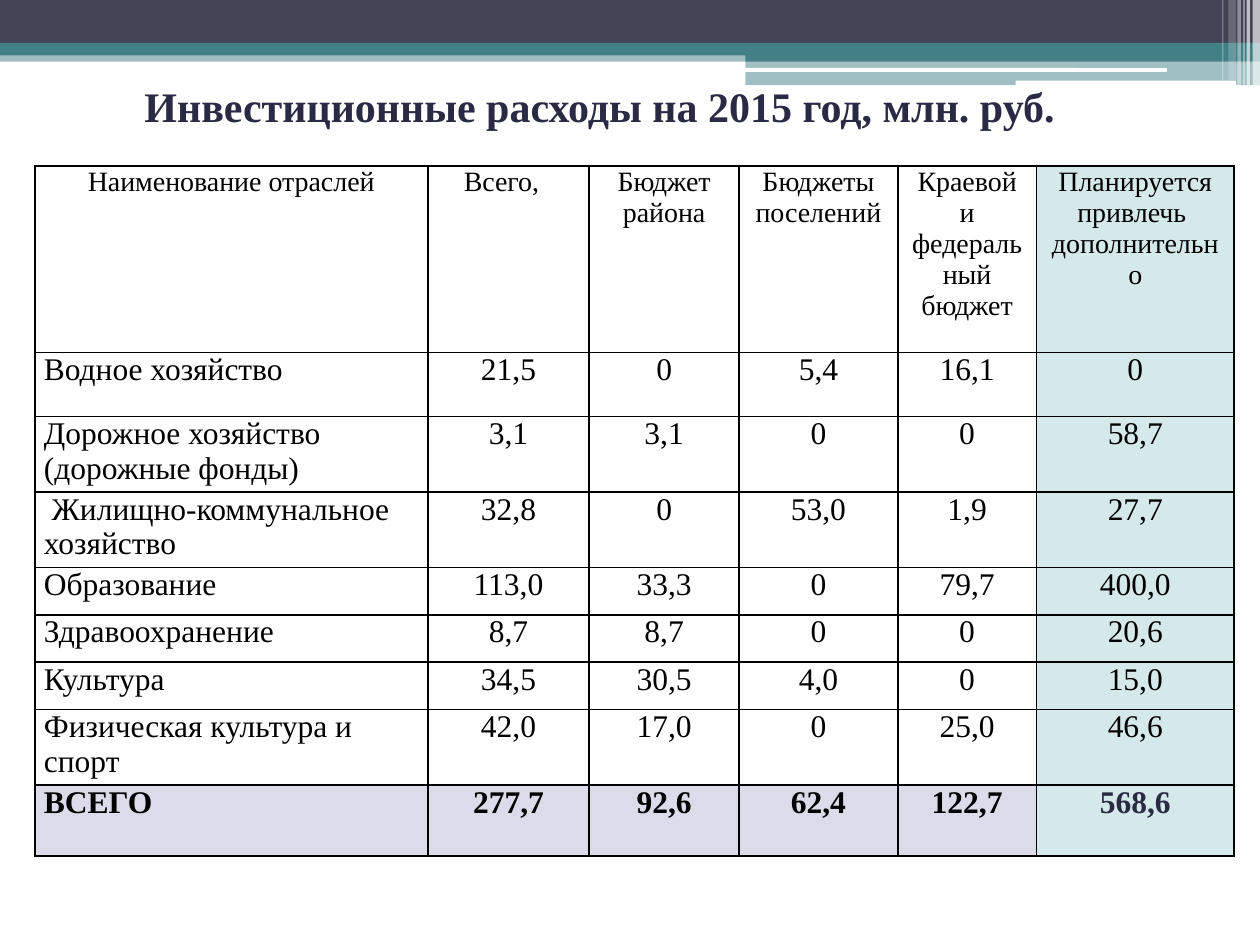
from lxml import etree
from pptx import Presentation
from pptx.dml.color import RGBColor
from pptx.enum.shapes import MSO_SHAPE
from pptx.enum.text import MSO_ANCHOR, PP_ALIGN
from pptx.oxml.ns import qn
from pptx.util import Pt

RECTANGLE, ROUNDED = MSO_SHAPE.RECTANGLE, MSO_SHAPE.ROUNDED_RECTANGLE
LEFT, CENTER = PP_ALIGN.LEFT, PP_ALIGN.CENTER
MIDDLE = MSO_ANCHOR.MIDDLE

BLACK = RGBColor(0x00, 0x00, 0x00)
WHITE = RGBColor(0xFF, 0xFF, 0xFF)
SLATE = RGBColor(0x42, 0x44, 0x56)
TEAL = RGBColor(0x43, 0x80, 0x86)
NAVY = RGBColor(0x2A, 0x2A, 0x45)
PALE_TEAL = RGBColor(0xD6, 0xE9, 0xEA)
PALE_VIOLET = RGBColor(0xDB, 0xDB, 0xE9)

FONT = "Times New Roman"
TITLE = "Инвестиционные расходы на 2015 год, млн. руб."

# left, top, width, height, colour, opacity in percent
BANDS = [
    (0, 28.8, 720, 6.5, TEAL, 50),
    (0, 0, 720, 24.5, SLATE, 100),
    (0, 24.5, 720, 7.2, TEAL, 100),
    (426, 28.1, 294, 7, TEAL, 100),
    (426, 34.7, 294, 14, TEAL, 50),
]
WHITE_BARS = [(425.6, 38.9, 241.2, 2.16), (580.3, 46.1, 126, 2.9)]
# left, width, height, opacity in percent
STRIPES = [
    (715.8, 4.2, 49, 65),
    (712.3, 2, 49, 65),
    (710.5, 0.7, 49, 60),
    (707.1, 2, 49, 40),
    (702, 4.3, 46, 20),
    (698.4, 0.7, 46, 30),
]

COLUMN_WIDTHS = [224.6, 92.2, 85.7, 90.7, 79.2, 113]
ROW_HEIGHTS = [106.3, 36.6, 40, 41.7, 27, 27, 27, 40, 40.6]
ROWS = [
    ["Наименование отраслей", "Всего,  ", "Бюджет района", "Бюджеты поселений",
     "Краевой и федеральный бюджет", "Планируется привлечь  дополнительно"],
    ["Водное хозяйство", "21,5", "0", "5,4", "16,1", "0"],
    ["Дорожное хозяйство (дорожные фонды)", "3,1", "3,1", "0", "0", "58,7"],
    [" Жилищно-коммунальное\nхозяйство", "32,8", "0", "53,0", "1,9", "27,7"],
    ["Образование", "113,0", "33,3", "0", "79,7", "400,0"],
    ["Здравоохранение", "8,7", "8,7", "0", "0", "20,6"],
    ["Культура", "34,5", "30,5", "4,0", "0", "15,0"],
    ["Физическая культура и спорт", "42,0", "17,0", "0", "25,0", "46,6"],
    ["ВСЕГО", "277,7", "92,6", "62,4", "122,7", "568,6"],
]


def write_text(frame, text, size=18, color=BLACK, bold=False, align=CENTER):
    frame.word_wrap = True
    frame.text = text
    for paragraph in frame.paragraphs:
        paragraph.alignment = align
        for run in paragraph.runs:
            run.font.name = FONT
            run.font.size = Pt(size)
            run.font.bold = bold
            run.font.color.rgb = color


def add_block(slide, left, top, width, height, color, opacity=100, kind=RECTANGLE):
    shape = slide.shapes.add_shape(kind, Pt(left), Pt(top), Pt(width), Pt(height))
    shape.shadow.inherit = False
    shape.line.fill.background()
    shape.fill.solid()
    shape.fill.fore_color.rgb = color
    if opacity < 100:
        color_element = shape.fill._xPr.find(".//" + qn("a:srgbClr"))
        etree.SubElement(color_element, qn("a:alpha"), val=str(opacity * 1000))


def add_header(slide):
    for band in BANDS:
        add_block(slide, *band)
    for bar in WHITE_BARS:
        add_block(slide, *bar, WHITE, kind=ROUNDED)
    for left, width, height, opacity in STRIPES:
        add_block(slide, left, 0, width, height, WHITE, opacity)


def add_title(slide):
    box = slide.shapes.add_textbox(Pt(18.7), Pt(31.7), Pt(648), Pt(56.9))
    box.text_frame.vertical_anchor = MIDDLE
    write_text(box.text_frame, TITLE, size=24, color=NAVY, bold=True)


def add_borders(cell):
    properties = cell._tc.get_or_add_tcPr()
    for side in ("a:lnL", "a:lnR", "a:lnT", "a:lnB"):
        line = etree.SubElement(properties, qn(side), w=str(Pt(1)))
        fill = etree.SubElement(line, qn("a:solidFill"))
        etree.SubElement(fill, qn("a:srgbClr"), val=str(BLACK))


def fill_cell(cell, color):
    if color is None:
        cell.fill.background()
    else:
        cell.fill.solid()
        cell.fill.fore_color.rgb = color


def add_expense_table(slide):
    frame = slide.shapes.add_table(
        len(ROWS), len(COLUMN_WIDTHS), Pt(19.9), Pt(95),
        Pt(sum(COLUMN_WIDTHS)), Pt(sum(ROW_HEIGHTS)))
    table = frame.table
    table.first_row = table.horz_banding = False
    for column, width in zip(table.columns, COLUMN_WIDTHS):
        column.width = Pt(width)
    for row, height in zip(table.rows, ROW_HEIGHTS):
        row.height = Pt(height)

    last_row, last_column = len(ROWS) - 1, len(COLUMN_WIDTHS) - 1
    for r, texts in enumerate(ROWS):
        is_header, is_total = r == 0, r == last_row
        for c, text in enumerate(texts):
            is_planned = c == last_column
            cell = table.cell(r, c)
            cell.margin_left = cell.margin_right = Pt(5.2)
            cell.margin_top = cell.margin_bottom = Pt(0)
            add_borders(cell)
            fill_cell(cell, PALE_TEAL if is_planned else PALE_VIOLET if is_total else None)
            write_text(cell.text_frame, text,
                       size=16 if is_header else 18,
                       color=NAVY if is_total and is_planned else BLACK,
                       bold=is_total,
                       align=LEFT if c == 0 and not is_header else CENTER)


def main():
    presentation = Presentation()
    presentation.slide_width, presentation.slide_height = Pt(720), Pt(540)
    slide = presentation.slides.add_slide(presentation.slide_layouts[6])
    add_header(slide)
    add_title(slide)
    add_expense_table(slide)
    presentation.save("out.pptx")


if __name__ == "__main__":
    main()
